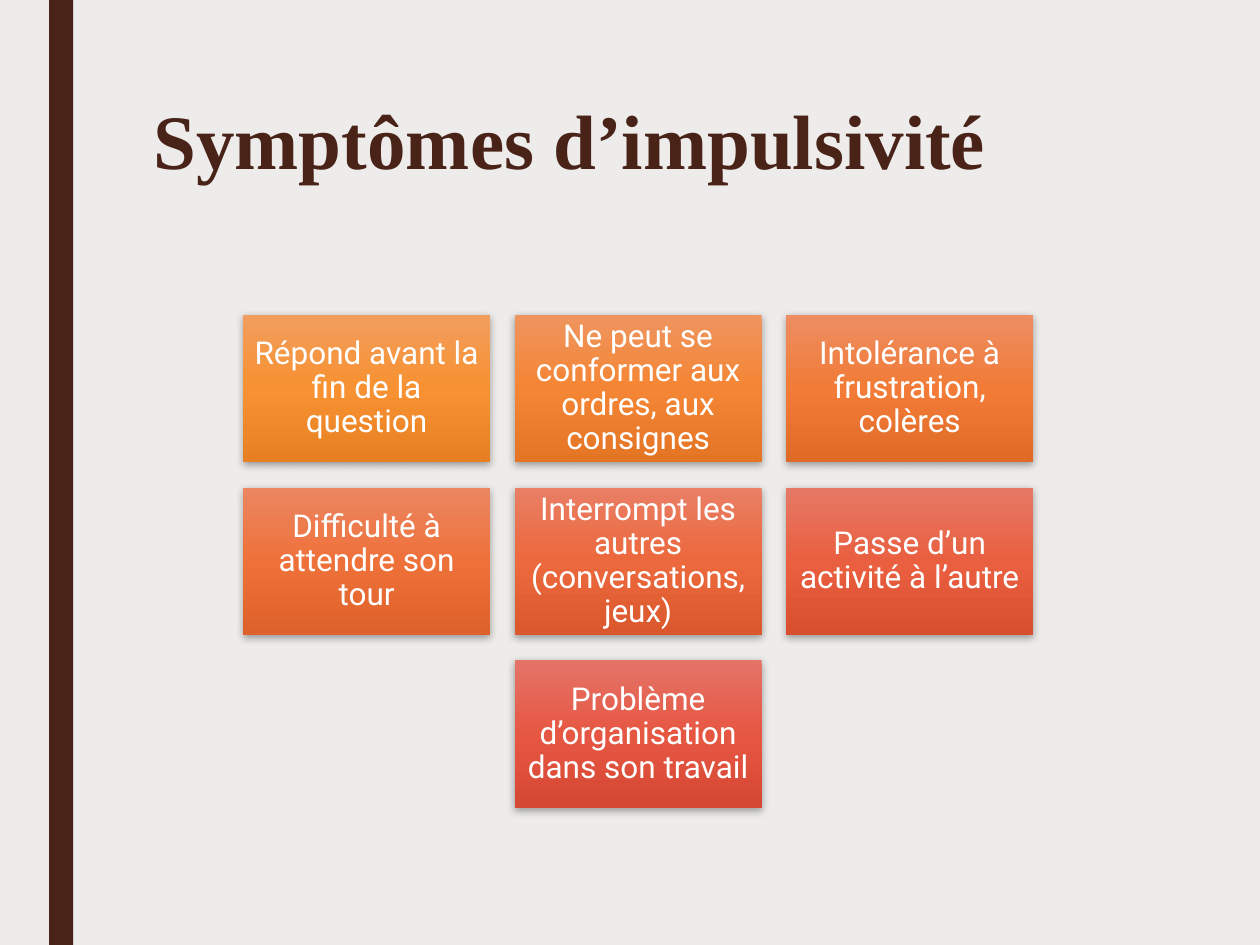
"""Build the slide on the symptoms of impulsivity."""
from copy import deepcopy

from lxml.etree import SubElement
from pptx import Presentation
from pptx.dml.color import RGBColor
from pptx.enum.shapes import MSO_SHAPE
from pptx.enum.text import MSO_ANCHOR, PP_ALIGN
from pptx.oxml.ns import qn
from pptx.util import Inches, Pt


def color(code):
    """Turn a hex string into a colour."""
    return RGBColor.from_string(code)


def write(shape, text, size=18, font="Roboto", tint="FFFFFF", bold=False,
          align=PP_ALIGN.CENTER, anchor=MSO_ANCHOR.MIDDLE, space=0.9, inset=0.07):
    """Put formatted text into a shape."""
    frame = shape.text_frame
    frame.word_wrap = True
    frame.vertical_anchor = anchor
    frame.margin_left = frame.margin_right = Inches(inset)
    frame.margin_top = frame.margin_bottom = Inches(min(inset, 0.07))
    para = frame.paragraphs[0]
    para.alignment = align
    para.line_spacing = space
    run = para.add_run()
    run.text = text
    run.font.size = Pt(size)
    run.font.name = font
    run.font.bold = bold
    run.font.color.rgb = color(tint)


deck = Presentation()
deck.slide_width = Inches(10)
deck.slide_height = Inches(7.5)
slide = deck.slides.add_slide(deck.slide_layouts[6])
slide.background.fill.solid()
slide.background.fill.fore_color.rgb = color("EDECEB")

bar = slide.shapes.add_shape(MSO_SHAPE.RECTANGLE, Inches(0.39), 0, Inches(0.19), Inches(7.5))
bar.shadow.inherit = False
bar.fill.solid()
bar.fill.fore_color.rgb = color("4A2318")
bar.line.fill.background()

title = slide.shapes.add_textbox(Inches(1.12), Inches(0.75), Inches(7.88), Inches(1.62))
write(title, "Symptômes d’impulsivité", size=44, font="Times New Roman", tint="4A2318",
      bold=True, align=PP_ALIGN.LEFT, anchor=MSO_ANCHOR.TOP, space=0.89, inset=0.1)

cards = [
    (0, 0, "Répond avant la fin de la question", ("F29E5E", "F79131", "E68022")),
    (0, 1, "Ne peut se conformer aux ordres, aux consignes", ("EF955F", "F48534", "E37524")),
    (0, 2, "Intolérance à frustration, colères", ("ED8D61", "F17B37", "E06B27")),
    (1, 0, "Difficulté à attendre son tour", ("EB8662", "EF713A", "DD612A")),
    (1, 1, "Interrompt les autres (conversations, jeux)", ("E97F64", "EC683D", "DB582D")),
    (1, 2, "Passe d’un activité à l’autre", ("E67965", "E95F40", "D84F30")),
    (2, 1, "Problème d’organisation dans son travail", ("E47467", "E65743", "D54833")),
]
for row, col, text, tones in cards:
    card = slide.shapes.add_shape(
        MSO_SHAPE.RECTANGLE, Inches(1.93 + 2.155 * col), Inches(2.5 + 1.37 * row),
        Inches(1.96), Inches(1.17))
    card.line.fill.background()
    card.fill.gradient()
    card.fill.gradient_angle = 270
    stops = card._element.spPr.find(qn("a:gradFill")).find(qn("a:gsLst"))
    stops.append(deepcopy(stops[-1]))
    for stop, tone, place in zip(card.fill.gradient_stops, tones, (0, 0.5, 1)):
        stop.color.rgb = color(tone)
        stop.position = place
    card.shadow.inherit = False
    effect = card._element.spPr.find(qn("a:effectLst"))
    shade = SubElement(effect, qn("a:outerShdw"), blurRad=str(Pt(4.5)), dist=str(Pt(1.5)),
                       dir="5400000", rotWithShape="0")
    black = SubElement(shade, qn("a:srgbClr"), val="000000")
    SubElement(black, qn("a:alpha"), val="35000")
    write(card, text)

deck.save("out.pptx")
